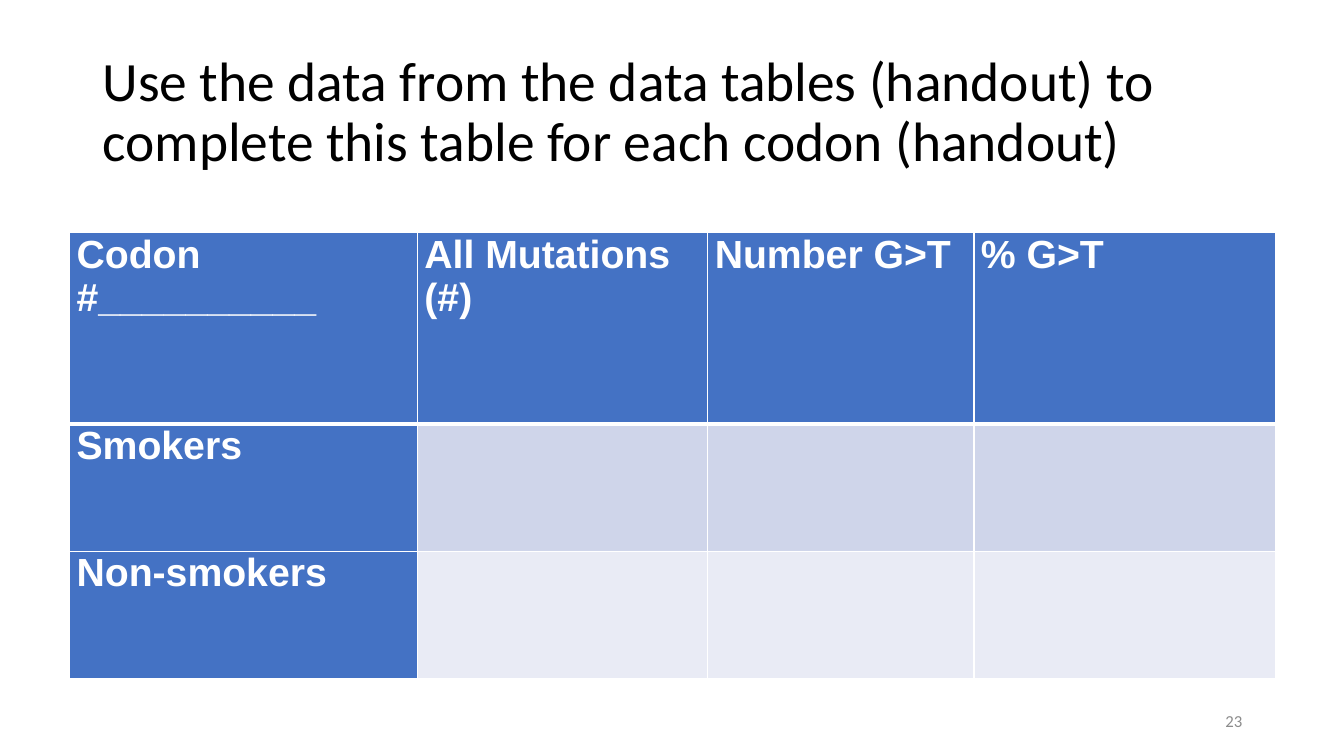
from lxml import etree
from pptx import Presentation
from pptx import util as u
from pptx.dml import color
from pptx.enum import text
from pptx.oxml import ns

COLORS = {
    "title": "000000",
    "header": "4472C4",
    "smokers": "CFD5EA",
    "non_smokers": "E9EBF5",
    "white": "FFFFFF",
    "number": "8C8C8C",
}
HEADINGS = ["Codon #__________", "All Mutations (#)", "Number G>T", "% G>T"]
GROUPS = [("Smokers", "smokers"), ("Non-smokers", "non_smokers")]
COLUMN_WIDTHS = [3.45, 2.88, 2.64, 2.99]
ROW_HEIGHTS = [1.9, 1.26, 1.26]


def rgb(name):
    return color.RGBColor.from_string(COLORS[name])


def set_attributes(target, values):
    for name, value in values.items():
        setattr(target, name, value)


def write(paragraph, wording, ink, **font_format):
    run = paragraph.add_run()
    run.text = wording
    set_attributes(run.font, font_format)
    run.font.color.rgb = rgb(ink)


def add_label(slide, wording, box, ink, paragraph_format, **font_format):
    frame = slide.shapes.add_textbox(*map(u.Inches, box)).text_frame
    set_attributes(frame, {"word_wrap": True, "vertical_anchor": text.MSO_ANCHOR.MIDDLE})
    set_attributes(frame.paragraphs[0], paragraph_format)
    write(frame.paragraphs[0], wording, ink, **font_format)


def add_borders(cell, widths):
    properties = cell._tc.get_or_add_tcPr()
    for position, (side, width) in enumerate(widths.items()):
        line = etree.Element(ns.qn(f"a:ln{side}"), w=str(u.Pt(width)))
        fill = etree.SubElement(line, ns.qn("a:solidFill"))
        etree.SubElement(fill, ns.qn("a:srgbClr"), val=COLORS["white"])
        properties.insert(position, line)


def fill_cell(cell, wording, background, widths):
    set_attributes(cell, {
        "margin_left": u.Inches(0.07),
        "margin_right": u.Inches(0.07),
        "margin_top": 0,
        "margin_bottom": 0,
    })
    cell.fill.solid()
    cell.fill.fore_color.rgb = rgb(background)
    add_borders(cell, widths)
    if wording:
        write(cell.text_frame.paragraphs[0], wording, "white",
              name="Arial", size=u.Pt(28), bold=True)


def add_codon_table(slide):
    box = (0.69, 2.31, sum(COLUMN_WIDTHS), sum(ROW_HEIGHTS))
    table = slide.shapes.add_table(
        len(ROW_HEIGHTS), len(COLUMN_WIDTHS), *map(u.Inches, box)).table
    table.first_col = True
    for column, width in zip(table.columns, COLUMN_WIDTHS):
        column.width = u.Inches(width)
    for row, height in zip(table.rows, ROW_HEIGHTS):
        row.height = u.Inches(height)
    for index, heading in enumerate(HEADINGS):
        fill_cell(table.cell(0, index), heading, "header",
                  {"L": 1, "R": 1, "T": 1, "B": 3})
    for row, (group, shade) in enumerate(GROUPS, start=1):
        widths = {"L": 1, "R": 1, "T": 3 if row == 1 else 1, "B": 1}
        for index in range(len(HEADINGS)):
            fill_cell(table.cell(row, index), "" if index else group,
                      shade if index else "header", widths)


def main():
    deck = Presentation()
    set_attributes(deck, {"slide_width": u.Inches(13.33), "slide_height": u.Inches(7.5)})
    slide = deck.slides.add_slide(deck.slide_layouts[6])
    add_label(slide,
              "Use the data from the data tables (handout) to complete this table "
              "for each codon (handout)",
              (0.92, 0.4, 11.5, 1.45), "title", {"line_spacing": 0.9},
              name="Calibri", size=u.Pt(39.6))
    add_codon_table(slide)
    add_label(slide, "23", (9.42, 6.95, 3, 0.4), "number",
              {"alignment": text.PP_ALIGN.RIGHT}, name="Calibri", size=u.Pt(12))
    deck.save("out.pptx")


if __name__ == "__main__":
    main()
